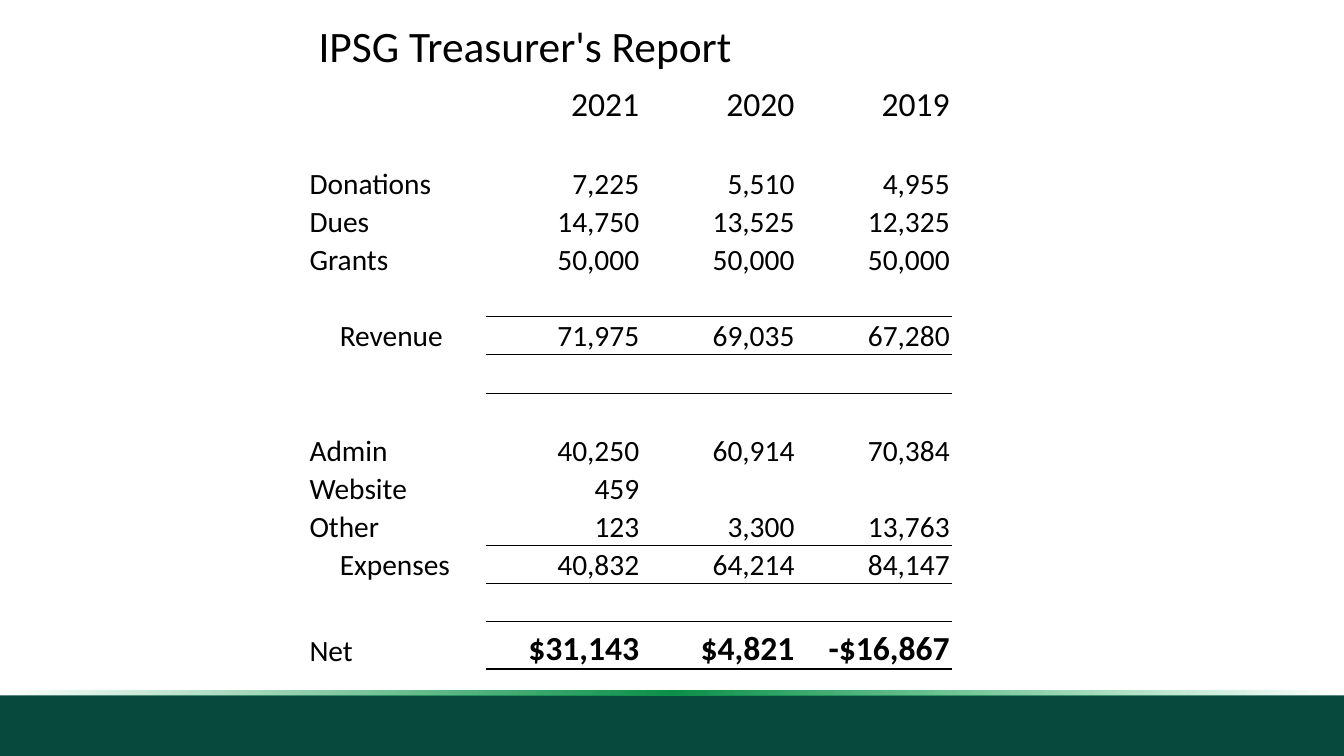
from lxml.etree import SubElement
from pptx import Presentation
from pptx.dml.color import RGBColor
from pptx.enum.shapes import MSO_SHAPE as Shape
from pptx.enum.text import MSO_ANCHOR as Anchor, PP_ALIGN as Align
from pptx.oxml.ns import qn
from pptx.util import Inches, Pt

COLORS = {"text": "000000", "band": "07493C"}
GLOW_STOPS = [(0, "0D9D4F", 0), (50, "0C9049", 100), (100, "0FAB56", 0)]
NO_STYLE = "{2D5ABB26-0587-4C30-8999-92F81FD0307C}"

TITLE = {"size": Pt(31), "bold": False}
YEARS = {"size": Pt(24), "bold": False}
BODY = {"size": Pt(21), "bold": False}
NET = {"size": Pt(24), "bold": True}

BLANK = ("", "", "", "")
REPORT = [
    ("IPSG Treasurer's Report", "", "", ""),
    ("", "2021", "2020", "2019"),
    BLANK,
    ("Donations", "7,225", "5,510", "4,955"),
    ("Dues", "14,750", "13,525", "12,325"),
    ("Grants", "50,000", "50,000", "50,000"),
    BLANK,
    ("Revenue", "71,975", "69,035", "67,280"),
    BLANK,
    BLANK,
    ("Admin", "40,250", "60,914", "70,384"),
    ("Website", "459", "", ""),
    ("Other", "123", "3,300", "13,763"),
    ("Expenses", "40,832", "64,214", "84,147"),
    BLANK,
    ("Net", "$31,143", "$4,821", "-$16,867"),
]
TITLE_ROW, YEAR_ROW, NET_ROW = 0, 1, len(REPORT) - 1
SUBTOTALS = ("Revenue", "Expenses")
RULES_BELOW = {6: 0.5, 7: 0.5, 12: 0.5, 13: 0.5, NET_ROW: 2}


def add_bar(page, left, top, width, height):
    bar = page.shapes.add_shape(
        Shape.RECTANGLE, Inches(left), Inches(top), Inches(width), Inches(height))
    bar.shadow.inherit = False
    bar.line.fill.background()
    return bar


def fade_ends(bar):
    """Fill the bar with a gradient that is clear at both ends."""
    bar.fill.gradient()
    bar.fill.gradient_angle = 0
    stops = bar.element.spPr.find(f".//{qn('a:gsLst')}")
    for stop in list(stops):
        stops.remove(stop)
    for place, color, opacity in GLOW_STOPS:
        stop = SubElement(stops, qn("a:gs"), pos=str(place * 1000))
        tint = SubElement(stop, qn("a:srgbClr"), val=color)
        SubElement(tint, qn("a:alpha"), val=str(opacity * 1000))


def add_footer(page, left, top, width, height):
    glow_height = 0.05
    band = add_bar(page, left, top + glow_height, width, height - glow_height)
    band.fill.solid()
    band.fill.fore_color.rgb = RGBColor.from_string(COLORS["band"])
    fade_ends(add_bar(page, left, top, width, glow_height))


def add_rule(cell, side, points):
    rule = SubElement(cell._tc.get_or_add_tcPr(), qn(f"a:{side}"), w=str(Pt(points)))
    fill = SubElement(rule, qn("a:solidFill"))
    SubElement(fill, qn("a:srgbClr"), val=COLORS["text"])


def write_cell(cell, text, column, look):
    para = cell.text_frame.paragraphs[0]
    para.alignment = Align.RIGHT if column else Align.LEFT
    span = para.add_run()
    span.text = text
    span.font.name = "Calibri"
    span.font.color.rgb = RGBColor.from_string(COLORS["text"])
    for name, value in look.items():
        setattr(span.font, name, value)


def format_cell(cell, row, column, text):
    margins = {"left": 0.02, "top": 0.02, "right": 0.02, "bottom": 0}
    if row == TITLE_ROW:
        margins = {"left": 0.11, "top": 0.06, "right": 0.11, "bottom": 0.06}
    elif text in SUBTOTALS:
        margins["left"] = 0.32
    for side, length in margins.items():
        setattr(cell, f"margin_{side}", Inches(length))
    cell.vertical_anchor = Anchor.BOTTOM
    if column:
        for side, ruled_row in (("lnT", row - 1), ("lnB", row)):
            if ruled_row in RULES_BELOW:
                add_rule(cell, side, RULES_BELOW[ruled_row])
    cell.fill.background()


def add_report(page, left, top, width, height):
    frame = page.shapes.add_table(
        len(REPORT), 4, Inches(left), Inches(top), Inches(width), Inches(height))
    for style in frame.element.iter(qn("a:tableStyleId")):
        style.text = NO_STYLE
    table = frame.table
    table.first_row = table.horz_banding = False

    label_width = 1.77
    for column, table_column in enumerate(table.columns):
        table_column.width = Inches((width - label_width) / 3 if column else label_width)
    tall_rows = {TITLE_ROW: 0.69, YEAR_ROW: 0.45, NET_ROW: 0.47}
    body_height = (height - sum(tall_rows.values())) / (len(REPORT) - len(tall_rows))
    for row, table_row in enumerate(table.rows):
        table_row.height = Inches(tall_rows.get(row, body_height))

    table.cell(TITLE_ROW, 0).merge(table.cell(TITLE_ROW, 2))
    looks = {TITLE_ROW: TITLE, YEAR_ROW: YEARS, NET_ROW: NET}
    for row, texts in enumerate(REPORT):
        for column, text in enumerate(texts):
            cell = table.cell(row, column)
            format_cell(cell, row, column, text)
            if text:
                look = BODY if text == "Net" else looks.get(row, BODY)
                write_cell(cell, text, column, look)


def main():
    deck = Presentation()
    deck.slide_width, deck.slide_height = Inches(13.33), Inches(7.5)
    page = deck.slides.add_slide(deck.slide_layouts[6])
    add_footer(page, 0, 6.85, 13.33, 0.65)
    add_report(page, 3.05, 0.11, 6.39, 6.53)
    deck.save("out.pptx")


if __name__ == "__main__":
    main()
